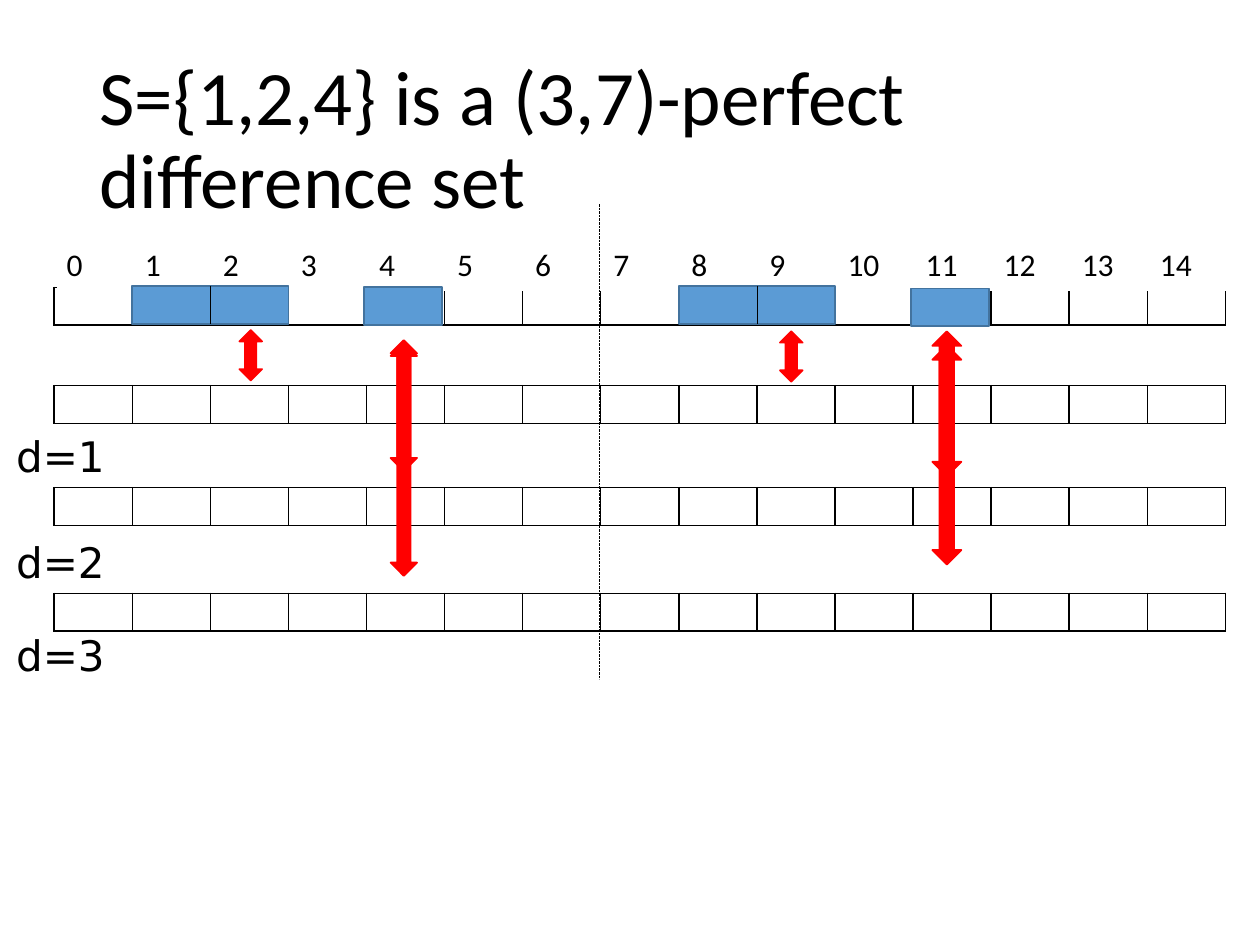
from dataclasses import dataclass

from lxml.etree import SubElement
from pptx import Presentation
from pptx.dml.color import RGBColor
from pptx.enum.dml import MSO_LINE
from pptx.enum.shapes import MSO_CONNECTOR, MSO_SHAPE
from pptx.enum.text import MSO_ANCHOR, PP_ALIGN
from pptx.oxml.ns import qn
from pptx.util import Inches, Pt


@dataclass(frozen=True)
class Theme:
    """Colours, fonts and type sizes of the slide."""
    black: str = "000000"
    white: str = "FFFFFF"
    red: str = "FF0000"
    blue: str = "5B9BD5"
    blue_edge: str = "43739E"
    font: str = "Calibri"
    label_font: str = "DejaVu Sans"
    title_size: int = 44
    label_size: int = 24
    index_size: int = 16
    empty_size: int = 10


class SlideBuilder:
    """Draws elements on one slide in one theme."""

    def __init__(self, page, theme):
        self.page = page
        self.theme = theme

    def format_paragraph(self, paragraph, size, family):
        """Set the font of a whole paragraph."""
        paragraph.font.size = Pt(size)
        paragraph.font.name = family
        paragraph.font.color.rgb = RGBColor.from_string(self.theme.black)

    def title(self, text, left, top, width, height):
        """Place and fill the title placeholder."""
        box = self.page.shapes.title
        box.left, box.top = Inches(left), Inches(top)
        box.width, box.height = Inches(width), Inches(height)
        frame = box.text_frame
        frame.text = text
        frame.vertical_anchor = MSO_ANCHOR.MIDDLE
        paragraph = frame.paragraphs[0]
        paragraph.alignment = PP_ALIGN.LEFT
        paragraph.line_spacing = 0.9
        self.format_paragraph(paragraph, self.theme.title_size, self.theme.font)

    def label(self, text, left, top, width=0.94, height=0.5):
        """Add a text label."""
        box = self.page.shapes.add_textbox(
            Inches(left), Inches(top), Inches(width), Inches(height))
        box.text_frame.word_wrap = True
        box.text_frame.text = text
        self.format_paragraph(
            box.text_frame.paragraphs[0], self.theme.label_size, self.theme.label_font)

    def border(self, cell):
        """Give a cell a thin border on all sides."""
        properties = cell._tc.get_or_add_tcPr()
        for side in ("a:lnL", "a:lnR", "a:lnT", "a:lnB"):
            line = SubElement(properties, qn(side), w=str(Pt(1)))
            fill = SubElement(line, qn("a:solidFill"))
            SubElement(fill, qn("a:srgbClr"), val=self.theme.black)

    def strip(self, left, top, cell_width, height, count, numbered=False):
        """Add a one-row table, either numbered or empty with borders."""
        table = self.page.shapes.add_table(
            1, count, Inches(left), Inches(top),
            Inches(cell_width * count), Inches(height)).table
        table.first_row = table.horz_banding = False
        for index, cell in enumerate(table.rows[0].cells):
            table.columns[index].width = Inches(cell_width)
            cell.margin_left = cell.margin_right = Inches(0.07)
            cell.margin_top = cell.margin_bottom = Inches(0.04)
            paragraph = cell.text_frame.paragraphs[0]
            if numbered:
                cell.text = str(index)
                paragraph.alignment = PP_ALIGN.CENTER
                self.format_paragraph(paragraph, self.theme.index_size, self.theme.font)
            else:
                ending = paragraph._p.get_or_add_endParaRPr()
                ending.set("sz", str(self.theme.empty_size * 100))
                self.border(cell)
            cell.fill.solid()
            cell.fill.fore_color.rgb = RGBColor.from_string(self.theme.white)

    def shape(self, shapes, kind, left, top, width, height, fill, edge):
        """Add a filled preset shape."""
        shape = shapes.add_shape(
            kind, Inches(left), Inches(top), Inches(width), Inches(height))
        shape.shadow.inherit = False
        shape.fill.solid()
        shape.fill.fore_color.rgb = RGBColor.from_string(fill)
        shape.line.color.rgb = RGBColor.from_string(edge)
        shape.line.width = Pt(1)
        return shape

    def arrow(self, left, top, width, height):
        """Add a red double arrow."""
        self.shape(self.page.shapes, MSO_SHAPE.UP_DOWN_ARROW,
                   left, top, width, height, self.theme.red, self.theme.red)

    def line(self, shapes, x, top, bottom):
        """Add a thin vertical line."""
        line = shapes.add_connector(
            MSO_CONNECTOR.STRAIGHT, Inches(x), Inches(top), Inches(x), Inches(bottom))
        line.line.color.rgb = RGBColor.from_string(self.theme.black)
        line.line.width = Pt(0.5)
        SubElement(line._element.spPr, qn("a:effectLst"))
        return line

    def period_mark(self, x, top):
        """Add the dashed line between two periods."""
        self.line(self.page.shapes, x, top, 5.39).line.dash_style = MSO_LINE.SQUARE_DOT

    def active_slots(self, left, single_left, single_top, cell_width, height):
        """Add a group marking the slots of the set in one period."""
        shapes = self.page.shapes.add_group_shape().shapes
        colours = self.theme.blue, self.theme.blue_edge
        top = 2.27
        pair = self.shape(shapes, MSO_SHAPE.RECTANGLE, left, top,
                          2 * cell_width, height, *colours)
        self.shape(shapes, MSO_SHAPE.RECTANGLE, single_left, single_top,
                   cell_width, height, *colours)
        divider = self.line(shapes, left + cell_width, top, top + height)
        divider.begin_connect(pair, 0)
        divider.end_connect(pair, 2)


def main():
    """Build the slide and save it."""
    deck = Presentation()
    deck.slide_width, deck.slide_height = Inches(10), Inches(7.5)
    page = deck.slides.add_slide(deck.slide_layouts[5])
    builder = SlideBuilder(page, Theme())
    cell_width, row_height, slots = 0.62, 0.3, 15

    builder.title("S={1,2,4} is a (3,7)-perfect difference set", 0.69, 0.4, 8.62, 1.45)
    for top in (4.71, 3.87, 3.06, 2.28):
        builder.strip(0.43, top, cell_width, row_height, slots)
    builder.strip(0.46, 1.92, cell_width, 0.34, slots, numbered=True)

    builder.arrow(1.9, 2.62, 0.18, 0.4)
    builder.arrow(3.1, 2.7, 0.21, 1.04)
    builder.arrow(3.1, 2.72, 0.21, 1.85)
    builder.active_slots(1.05, 2.89, 2.28, cell_width, row_height)
    builder.period_mark(4.76, 1.62)
    builder.arrow(6.19, 2.63, 0.18, 0.4)
    builder.arrow(7.4, 2.74, 0.23, 1.04)
    builder.active_slots(5.39, 7.23, 2.29, cell_width, row_height)
    builder.arrow(7.4, 2.63, 0.23, 1.85)

    for distance, top in enumerate((3.37, 4.21, 4.95), start=1):
        builder.label(f"d={distance}", 0.03, top)
    deck.save("out.pptx")


if __name__ == "__main__":
    main()
